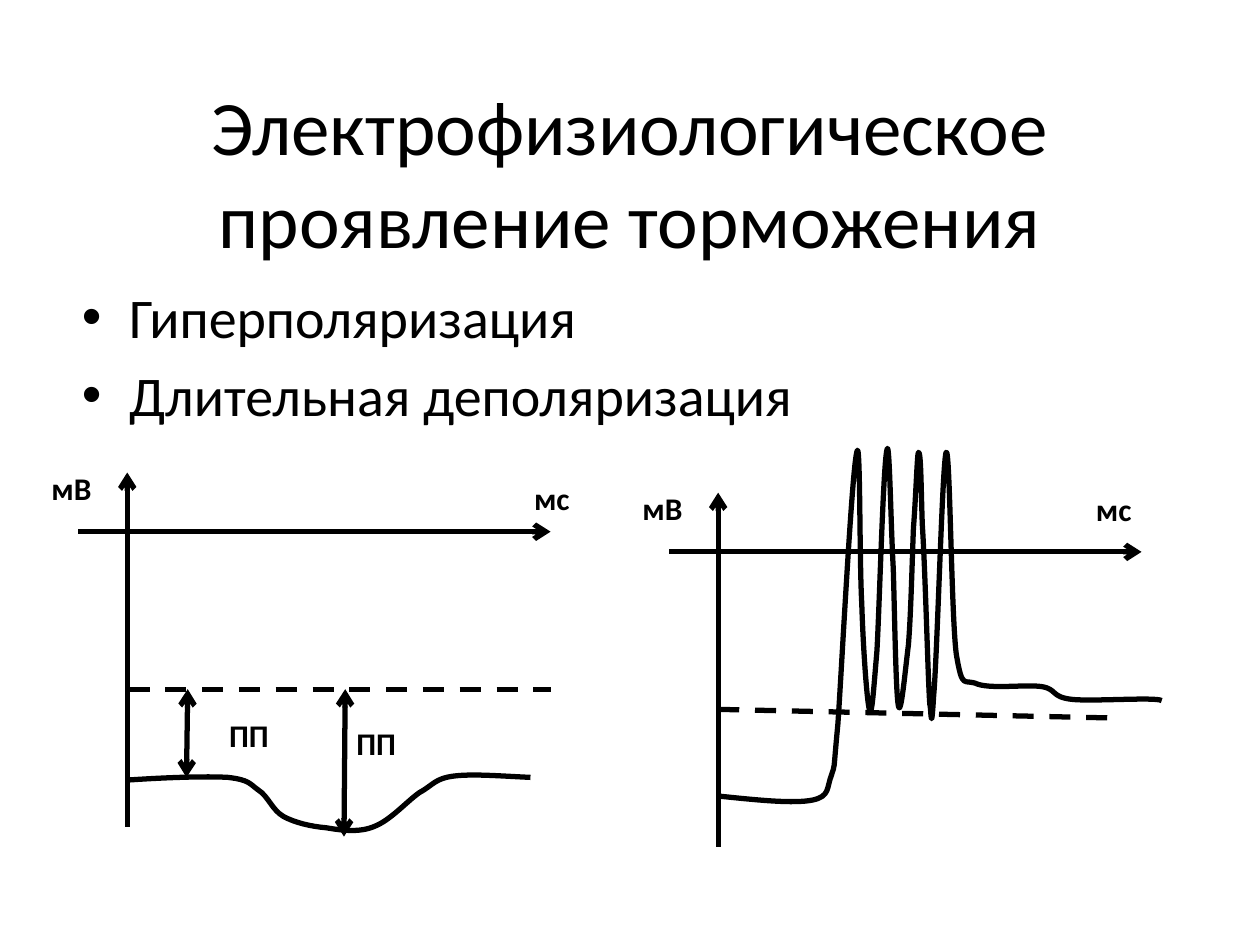
from lxml.etree import SubElement
from pptx import Presentation
from pptx.dml.color import RGBColor
from pptx.enum.dml import MSO_LINE
from pptx.enum.text import MSO_ANCHOR, PP_ALIGN
from pptx.oxml.ns import qn
from pptx.util import Inches, Pt

COLORS = {"ink": "000000", "background": "FFFFFF"}
FONT = "Calibri"
TITLE = "Электрофизиологическое проявление торможения"
BULLETS = ["Гиперполяризация", "Длительная деполяризация"]

# Each curve is a start point followed by three points per cubic segment.
HYPERPOLARIZATION = [
    (1.03, 6.19),
    (1.33, 6.17), (1.64, 6.16), (1.81, 6.17),
    (1.98, 6.19), (1.98, 6.22), (2.05, 6.27),
    (2.13, 6.32), (2.16, 6.43), (2.25, 6.48),
    (2.34, 6.53), (2.47, 6.56), (2.59, 6.57),
    (2.71, 6.59), (2.85, 6.61), (2.97, 6.56),
    (3.10, 6.51), (3.23, 6.36), (3.33, 6.29),
    (3.44, 6.23), (3.45, 6.18), (3.60, 6.16),
    (3.75, 6.14), (3.98, 6.16), (4.21, 6.17),
]
DEPOLARIZATION = [
    (5.72, 6.32),
    (6.01, 6.35), (6.30, 6.38), (6.45, 6.35),
    (6.59, 6.32), (6.56, 6.25), (6.60, 6.15),
    (6.63, 6.05), (6.61, 6.17), (6.65, 5.75),
    (6.68, 5.32), (6.76, 3.75), (6.80, 3.59),
    (6.83, 3.43), (6.82, 4.45), (6.84, 4.79),
    (6.85, 5.13), (6.88, 5.56), (6.90, 5.63),
    (6.92, 5.69), (6.93, 5.52), (6.96, 5.17),
    (6.98, 4.83), (7.01, 3.68), (7.04, 3.57),
    (7.06, 3.46), (7.07, 4.17), (7.09, 4.51),
    (7.10, 4.84), (7.11, 5.50), (7.13, 5.60),
    (7.15, 5.70), (7.18, 5.36), (7.21, 5.12),
    (7.23, 4.88), (7.24, 4.44), (7.25, 4.19),
    (7.27, 3.93), (7.28, 3.59), (7.29, 3.59),
    (7.31, 3.58), (7.31, 3.86), (7.32, 4.16),
    (7.34, 4.46), (7.36, 5.16), (7.37, 5.40),
    (7.38, 5.64), (7.38, 5.56), (7.38, 5.59),
    (7.39, 5.61), (7.39, 5.87), (7.41, 5.53),
    (7.44, 5.20), (7.48, 3.64), (7.51, 3.59),
    (7.54, 3.53), (7.55, 4.88), (7.59, 5.19),
    (7.64, 5.49), (7.65, 5.38), (7.76, 5.43),
    (7.88, 5.47), (8.15, 5.43), (8.27, 5.45),
    (8.39, 5.47), (8.34, 5.53), (8.50, 5.55),
    (8.66, 5.57), (9.17, 5.53), (9.22, 5.56),
]
# origin: left end of the time axis; the other places are absolute
GRAPHS = [
    {"origin": (0.62, 4.22), "threshold": [(1.02, 5.47), (4.37, 5.47)],
     "curve": HYPERPOLARIZATION,
     "spans": [[(1.49, 5.47), (1.48, 6.17)], [(2.74, 5.47), (2.73, 6.64)]],
     "labels": [("ПП", 1.72, 5.63), ("ПП", 2.73, 5.70),
                ("мВ", 0.31, 3.67), ("мс", 4.14, 3.75)]},
    {"origin": (5.31, 4.38), "threshold": [(5.70, 5.63), (8.91, 5.70)],
     "curve": DEPOLARIZATION, "spans": [],
     "labels": [("мВ", 5.00, 3.83), ("мс", 8.60, 3.84)]},
]
TIME_LENGTH = 3.75
VOLT_OFFSET, VOLT_ABOVE, VOLT_BELOW = 0.39, 0.47, 2.34


def color(name):
    return RGBColor.from_string(COLORS[name])


def place(shape, left, top, width, height):
    shape.left, shape.top = Inches(left), Inches(top)
    shape.width, shape.height = Inches(width), Inches(height)


def style_font(para, size, bold=False):
    font = para.font
    font.name, font.size, font.bold = FONT, Pt(size), bold
    font.color.rgb = color("ink")


def style_line(shape):
    shape.line.color.rgb = color("ink")
    shape.line.width = Pt(3)


def add_line(page, start, end, arrows=(), dashed=False):
    """Draw a line; arrows names the ends (headEnd, tailEnd) with a tip."""
    line = page.shapes.add_connector(1, *map(Inches, start + end))
    style_line(line)
    if dashed:
        line.line.dash_style = MSO_LINE.DASH
    properties = line._element.spPr
    for arrow in arrows:
        SubElement(properties.find(qn("a:ln")), qn("a:" + arrow), type="arrow")
    SubElement(properties, qn("a:effectLst"))


def add_curve(page, points):
    """Build a freeform and turn each three of its points into a cubic."""
    start, *others = [(Inches(x), Inches(y)) for x, y in points]
    builder = page.shapes.build_freeform(*start)
    builder.add_line_segments(others, close=False)
    curve = builder.convert_to_shape()
    curve.shadow.inherit = False
    curve.fill.background()
    style_line(curve)
    outline = next(curve._element.iter(qn("a:path")))
    steps = outline.findall(qn("a:lnTo"))
    for first in range(0, len(steps), 3):
        cubic = SubElement(outline, qn("a:cubicBezTo"))
        for step in steps[first:first + 3]:
            cubic.append(step[0])
            outline.remove(step)


def add_label(page, text, left, top):
    box = page.shapes.add_textbox(*map(Inches, (left, top, 0.7, 0.4)))
    box.text_frame.word_wrap = True
    para = box.text_frame.paragraphs[0]
    para.text = text
    style_font(para, 18, bold=True)


def add_graph(page, graph):
    left, zero = graph["origin"]
    volt = left + VOLT_OFFSET
    add_line(page, (left, zero), (left + TIME_LENGTH, zero), ["tailEnd"])
    add_line(page, (volt, zero + VOLT_BELOW), (volt, zero - VOLT_ABOVE), ["tailEnd"])
    add_line(page, *graph["threshold"], dashed=True)
    add_curve(page, graph["curve"])
    for start, end in graph["spans"]:
        add_line(page, start, end, ["headEnd", "tailEnd"])
    for label in graph["labels"]:
        add_label(page, *label)


def main():
    deck = Presentation()
    deck.slide_width, deck.slide_height = Inches(10), Inches(7.5)
    page = deck.slides.add_slide(deck.slide_layouts[1])
    page.background.fill.solid()
    page.background.fill.fore_color.rgb = color("background")

    title = page.shapes.title
    place(title, 0.5, 0.3, 9, 2.12)
    title.text_frame.text = TITLE
    title.text_frame.vertical_anchor = MSO_ANCHOR.MIDDLE
    title.text_frame.paragraphs[0].alignment = PP_ALIGN.CENTER
    style_font(title.text_frame.paragraphs[0], 44)

    body = page.placeholders[1]
    place(body, 0.55, 2.19, 9, 1.41)
    body.text_frame.text = "\n".join(BULLETS)
    for para in body.text_frame.paragraphs:
        style_font(para, 32)

    for graph in GRAPHS:
        add_graph(page, graph)
    deck.save("out.pptx")


if __name__ == "__main__":
    main()
